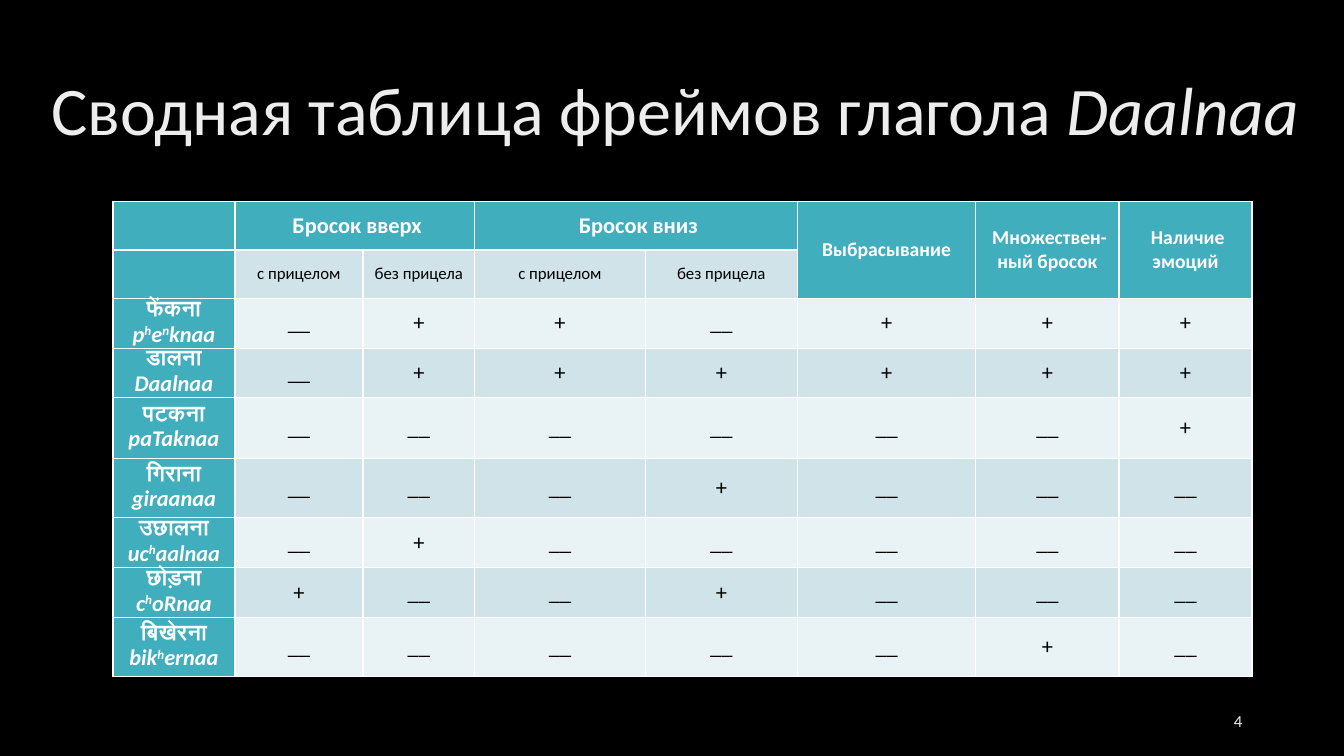
"""Build the summary table slide for the frames of the verb Daalnaa."""
import pptx
import pptx.util
import pptx.dml.color
import pptx.enum.text

Inches, Pt = pptx.util.Inches, pptx.util.Pt
PP, MSO = pptx.enum.text.PP_ALIGN, pptx.enum.text.MSO_ANCHOR
TEAL, PALE, LIGHT = "41AEBD", "CFE3E8", "E9F2F4"
WHITE, BLACK, GREY = "FFFFFF", "000000", "EDEDED"


def paint(fill, color):
    fill.solid()
    fill.fore_color.rgb = pptx.dml.color.RGBColor.from_string(color)


def write(para, text, size, color, **form):
    run = para.add_run()
    run.text = text
    for key, value in {"name": "Calibri", "size": Pt(size), **form}.items():
        setattr(run.font, key, value)
    paint(run.font.fill, color)
    return run


deck = pptx.Presentation()
deck.slide_width, deck.slide_height = Inches(13.33), Inches(7.5)
slide = deck.slides.add_slide(deck.slide_layouts[5])
paint(slide.background.fill, BLACK)

title = slide.shapes.title
place = {"left": 0.41, "top": 0.4, "width": 13.3, "height": 1.45}
for key, value in place.items():
    setattr(title, key, Inches(value))
title.text_frame.vertical_anchor = MSO.MIDDLE
para = title.text_frame.paragraphs[0]
para.alignment, para.line_spacing = PP.LEFT, 0.9
write(para, "Сводная таблица фреймов глагола ", 48.6, GREY)
write(para, "Daalnaa", 48.6, GREY, italic=True)

cols = [1.21, 1.27, 1.11, 1.69, 1.51, 1.77, 1.42, 1.32]
rows = [0.48, 0.48, 0.49, 0.49, 0.6, 0.59, 0.49, 0.49, 0.59]
heads = {
    (0, 1): [("\u00a0", 14), ("Бросок вверх", 16)],
    (0, 3): [("\u00a0", 14), ("Бросок вниз", 16)],
    (0, 5): [("Выбрасывание", 14)],
    (0, 6): [("\u00a0Множествен-ный бросок", 14)],
    (0, 7): [("\u00a0Наличие эмоций", 14)],
}
aims = ["с прицелом", "без прицела"] * 2
verbs = [
    ("फेंकना", "p^h^e^n^knaa", "-++-+++"),
    ("डालना", "Daalnaa", "-++++++"),
    ("पटकना", "paTaknaa", "------+"),
    ("गिराना", "giraanaa", "---+---"),
    ("उछालना", "uc^h^aalnaa", "-+-----"),
    ("छोड़ना", "c^h^oRnaa", "+--+---"),
    ("बिखेरना", "bik^h^ernaa", "-----+-"),
]

grid = slide.shapes.add_table(
    len(rows), len(cols), Inches(1.12), Inches(2),
    Inches(sum(cols)), Inches(sum(rows))).table
for col, width in zip(grid.columns, cols):
    col.width = Inches(width)
for row, height in zip(grid.rows, rows):
    row.height = Inches(height)

form = {"vertical_anchor": MSO.MIDDLE, "margin_left": Inches(0.05),
        "margin_right": Inches(0.05), "margin_top": 0, "margin_bottom": 0}
for r in range(len(rows)):
    for c in range(len(cols)):
        cell = grid.cell(r, c)
        for key, value in form.items():
            setattr(cell, key, value)
        band = PALE if r % 2 else LIGHT
        paint(cell.fill, TEAL if r == 0 or c == 0 else band)
        para = cell.text_frame.paragraphs[0]
        para.alignment, para.space_after = PP.CENTER, Pt(16)
        for text, size in heads.get((r, c), []):
            write(para, text, size, WHITE, bold=True)
        if r == 1 and 1 <= c <= 4:
            write(para, aims[c - 1], 12, BLACK, bold=False)
        if r < 2:
            continue
        hindi, latin, marks = verbs[r - 2]
        if c:
            mark = "+" if marks[c - 1] == "+" else "__"
            write(para, mark, 16, BLACK, bold=False)
            continue
        write(para, hindi, 16, WHITE, bold=True)
        para.add_line_break()
        for n, part in enumerate(latin.split("^")):
            run = write(para, part, 16, WHITE, bold=True, italic=True)
            if n % 2:
                run.font._element.set("baseline", "30000")

for top, left, low, right in [(0, 1, 0, 2), (0, 3, 0, 4),
                              (0, 5, 1, 5), (0, 6, 1, 6), (0, 7, 1, 7)]:
    grid.cell(top, left).merge(grid.cell(low, right))

box = slide.shapes.add_textbox(
    Inches(9.42), Inches(6.95), Inches(3), Inches(0.4))
box.text_frame.word_wrap = True
box.text_frame.vertical_anchor = MSO.MIDDLE
para = box.text_frame.paragraphs[0]
para.alignment = PP.RIGHT
write(para, "4", 12, GREY)

deck.save("out.pptx")
